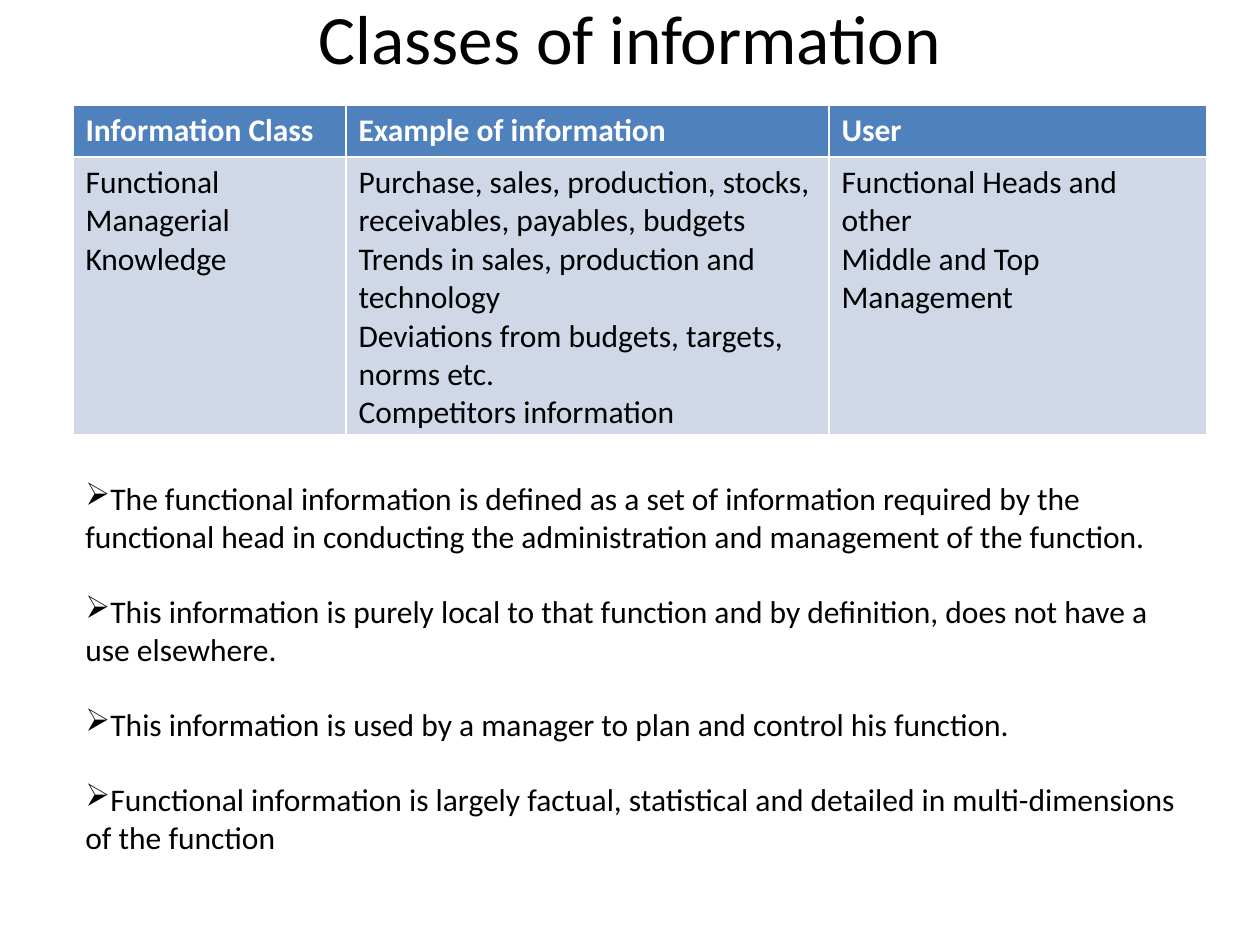
from lxml.etree import SubElement
from pptx import Presentation
from pptx.dml.color import RGBColor
from pptx.enum.text import MSO_ANCHOR, PP_ALIGN
from pptx.oxml.ns import qn
from pptx.util import Emu, Pt

TITLE = "Classes of information"
COLUMNS = [  # heading, width, lines
    ("Information Class", 273, ["Functional", "Managerial", "Knowledge"]),
    ("Example of information", 483, [
        "Purchase, sales, production, stocks, receivables, payables, budgets",
        "Trends in sales, production and technology",
        "Deviations from budgets, targets, norms etc.",
        "Competitors information"]),
    ("User", 378, ["Functional Heads and other", "Middle and Top Management"]),
]
ROW_HEIGHTS = [52, 277]
NOTES = [
    "The functional information is defined as a set of information required by the "
    "functional head in conducting the administration and management of the function.",
    "This information is purely local to that function and by definition, "
    "does not have a use elsewhere.",
    "This information is used by a manager to plan and control his function.",
    "Functional information is largely factual, statistical and detailed in "
    "multi-dimensions of the function",
]


def px(n):
    return Emu(n * 914400 // 126)


def rgb(value):
    return RGBColor.from_string(value)


def write(tf, lines, size, color="000000", bold=False):
    tf.word_wrap = True
    tf.text = "\n".join(lines)
    for p in tf.paragraphs:
        for r in p.runs:
            r.font.name, r.font.size, r.font.bold = "Calibri", Pt(size), bold
            r.font.color.rgb = rgb(color)


def fill_cell(cell, lines, fill, color, bold):
    cell.fill.solid()
    cell.fill.fore_color.rgb = rgb(fill)
    write(cell.text_frame, lines, 18, color, bold)


prs = Presentation()
prs.slide_width, prs.slide_height = px(1260), px(945)
slide = prs.slides.add_slide(prs.slide_layouts[6])

# Title
tf = slide.shapes.add_textbox(px(63), 0, px(1134), px(73)).text_frame
write(tf, [TITLE], 39.6)
tf.vertical_anchor = MSO_ANCHOR.MIDDLE
tf.paragraphs[0].alignment = PP_ALIGN.CENTER

# Table: the default style draws the white rules
table = slide.shapes.add_table(2, len(COLUMNS), px(73), px(105),
                               px(1134), px(sum(ROW_HEIGHTS))).table
for row, height in zip(table.rows, ROW_HEIGHTS):
    row.height = px(height)
for i, (heading, width, lines) in enumerate(COLUMNS):
    table.columns[i].width = px(width)
    fill_cell(table.cell(0, i), [heading], "4F81BD", "FFFFFF", True)
    fill_cell(table.cell(1, i), lines, "D0D8E8", "000000", False)

# Bulleted notes
tf = slide.shapes.add_textbox(px(73), px(473), px(1124), px(394)).text_frame
write(tf, NOTES, 18)
for p in tf.paragraphs:
    p.space_after = Pt(21.3)
    SubElement(p._p.get_or_add_pPr(), qn("a:buChar")).set("char", "➢")

prs.save("out.pptx")
